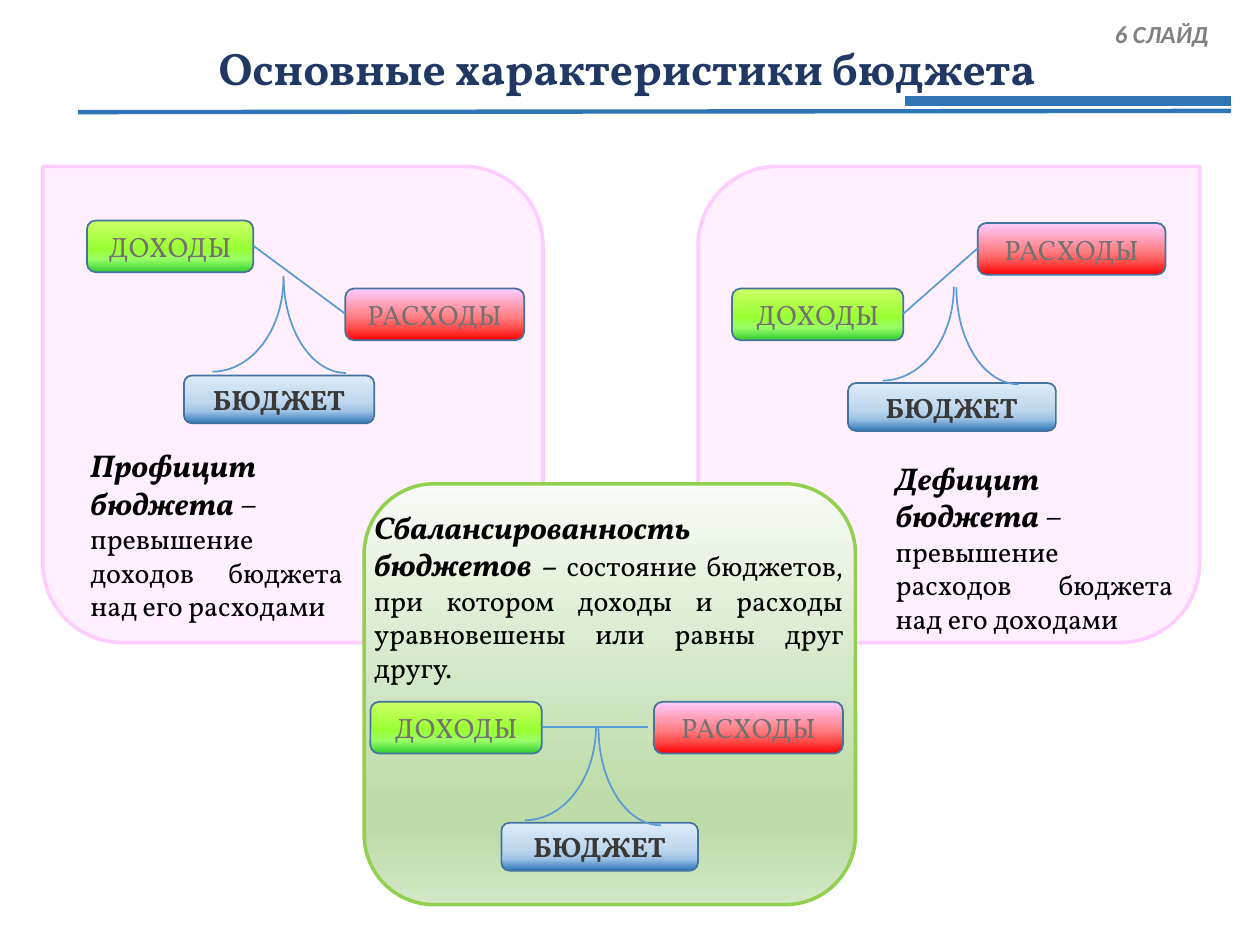
from lxml import etree
from pptx import Presentation
from pptx.dml.color import RGBColor
from pptx.enum.shapes import MSO_CONNECTOR, MSO_SHAPE
from pptx.enum.text import MSO_ANCHOR, MSO_AUTO_SIZE, PP_ALIGN
from pptx.oxml.ns import qn
from pptx.util import Inches, Pt

ROUNDED, ARC, DIAGONAL = MSO_SHAPE.ROUNDED_RECTANGLE, MSO_SHAPE.ARC, MSO_SHAPE.ROUND_2_DIAG_RECTANGLE
STRAIGHT = MSO_CONNECTOR.STRAIGHT
TOP, MIDDLE = MSO_ANCHOR.TOP, MSO_ANCHOR.MIDDLE
GROW = MSO_AUTO_SIZE.SHAPE_TO_FIT_TEXT
CENTER, JUSTIFY = PP_ALIGN.CENTER, PP_ALIGN.JUSTIFY

THEME = {
    "font": "Vollkorn", "number_font": "Calibri",
    "title_size": 26, "term_size": 18, "text_size": 16, "number_size": 14,
    "title": "203864", "text": "000000", "number": "808080",
    "label": "767171", "budget_label": "3B3838",
    "rule": "2E75B6", "scale": "5B9BD5", "box_line": "43739E",
    "pink": "FFEFFF", "pink_line": "FFCCFF", "green_line": "92D050",
    "balance": [(0, "F8FBF6"), (74, "BEDCAA"), (83, "BEDCAA"), (100, "D4E8C6")],
    "income": [(0, "CCFF66"), (56, "99FF33"), (75, "99FF66"), (100, "33CC33")],
    "expenses": [(0, "FFCCFF"), (56, "FF7C80"), (75, "FF5050"), (100, "FF0000")],
    "budget": [(0, "DEEBF7"), (56, "BDD7EE"), (75, "9DC3E6"), (100, "2E75B6")],
}


def add_box(kind, place, fill, line, width):
    """Add a preset shape; fill is a colour, a list of gradient stops or None."""
    shape = slide.shapes.add_shape(kind, *map(Inches, place))
    shape.shadow.inherit = False
    shape.line.color.rgb = RGBColor.from_string(line)
    shape.line.width = Pt(width)
    if fill is None:
        shape.fill.background()
    elif isinstance(fill, str):
        shape.fill.solid()
        shape.fill.fore_color.rgb = RGBColor.from_string(fill)
    else:
        shape.fill.gradient()
        shape.fill.gradient_angle = 270
        stops = shape.element.spPr.find(".//" + qn("a:gsLst"))
        for stop in list(stops):
            stops.remove(stop)
        for position, color in fill:
            stop = etree.SubElement(stops, qn("a:gs"), pos=str(position * 1000))
            etree.SubElement(stop, qn("a:srgbClr"), val=color)
    return shape


def style_run(run, size, color, bold=False, italic=False, font=THEME["font"]):
    run.font.name, run.font.size = font, Pt(size)
    run.font.bold, run.font.italic = bold, italic
    run.font.color.rgb = RGBColor.from_string(color)


presentation = Presentation()
presentation.slide_width, presentation.slide_height = Inches(10), Inches(7.5)
slide = presentation.slides.add_slide(presentation.slide_layouts[5])

# Title
title = slide.shapes.title
title.left, title.top, title.width, title.height = map(Inches, (0.67, 0.14, 8.62, 0.85))
title.text_frame.text = "Основные характеристики бюджета"
title.text_frame.vertical_anchor = MIDDLE
paragraph = title.text_frame.paragraphs[0]
paragraph.alignment, paragraph.line_spacing = CENTER, 0.9
style_run(paragraph.runs[0], THEME["title_size"], THEME["title"], bold=True)

# Panels: deficit, surplus, balance
add_box(DIAGONAL, (5.54, 1.32, 3.98, 3.78), THEME["pink"], THEME["pink_line"], 2)
surplus_panel = add_box(DIAGONAL, (0.34, 1.32, 3.97, 3.78), THEME["pink"], THEME["pink_line"], 2)
surplus_panel.element.spPr.get_or_add_xfrm().set("flipH", "1")
add_box(ROUNDED, (2.89, 3.84, 3.9, 3.34), THEME["balance"], THEME["green_line"], 2)

# Scales: labelled boxes as (left, top, width), stand arcs as (left, top)
LABELS = {
    "budget": ("БЮДЖЕТ", 0.38, THEME["budget_label"], True),
    "expenses": ("РАСХОДЫ", 0.41, THEME["label"], False),
    "income": ("ДОХОДЫ", 0.41, THEME["label"], False),
}
scales = [
    {"budget": (3.98, 6.53, 1.56), "expenses": (5.19, 5.57, 1.5), "income": (2.94, 5.57, 1.36),
     "left_arc": (3.42, 5.2), "right_arc": (4.75, 5.01)},
    {"budget": (1.46, 2.98, 1.51), "expenses": (2.74, 2.29, 1.42), "income": (0.69, 1.75, 1.32),
     "left_arc": (0.94, 1.64), "right_arc": (2.25, 1.42)},
    {"budget": (6.73, 3.04, 1.65), "expenses": (7.76, 1.77, 1.49), "income": (5.81, 2.29, 1.36),
     "left_arc": (6.26, 1.71), "right_arc": (7.59, 1.51)},
]
lines = []
for scale in scales:
    for name, (label, height, color, bold) in LABELS.items():
        box = add_box(ROUNDED, (*scale[name], height), THEME[name], THEME["box_line"], 1)
        box.text_frame.text = label
        box.text_frame.vertical_anchor = MIDDLE
        paragraph = box.text_frame.paragraphs[0]
        paragraph.alignment = CENTER
        style_run(paragraph.runs[0], THEME["text_size"], color, bold)
    for name, size, rotation in (("right_arc", (0.99, 1.54), 180), ("left_arc", (1.49, 1.13), 90)):
        arc = add_box(ARC, (*scale[name], *size), None, THEME["scale"], 1)
        arc.rotation = rotation
    # The beam joins the facing edges of the two boxes
    left, top, width = scale["income"]
    end_left, end_top, _ = scale["expenses"]
    gap = 0.05 if top == end_top else 0
    lines.append(((left + width, top + 0.2), (end_left - gap, end_top + 0.2), THEME["scale"], 1))

# Beams and the double rule under the title
lines += [
    ((0.62, 0.89), (9.77, 0.88), THEME["rule"], 2.5),
    ((7.18, 0.8), (9.77, 0.8), THEME["rule"], 6),
]
for start, end, color, width in lines:
    line = slide.shapes.add_connector(STRAIGHT, *map(Inches, (*start, *end)))
    line.line.color.rgb = RGBColor.from_string(color)
    line.line.width = Pt(width)
    etree.SubElement(line.element.spPr, qn("a:effectLst"))

# Definitions: paragraphs of (text, size, bold italic) runs
TERM, BODY = THEME["term_size"], THEME["text_size"]
definitions = [
    ((2.87, 3.98, 3.92, 1.51), [[
        ("Сбалансированность бюджетов ", TERM, True), ("– ", BODY, True),
        ("состояние бюджетов, при котором доходы и расходы уравновешены или равны друг другу.",
         BODY, False)]]),
    ((7.01, 3.59, 2.4, 1.51), [
        [("Дефицит бюджета ", TERM, True), ("–", TERM, False)],
        [("превышение расходов бюджета над его доходами", BODY, False)]]),
    ((0.62, 3.49, 2.2, 1.51), [
        [("Профицит бюджета ", TERM, True), ("–", TERM, False)],
        [("превышение доходов бюджета над его расходами", BODY, False)]]),
]
for place, paragraphs in definitions:
    text_frame = slide.shapes.add_textbox(*map(Inches, place)).text_frame
    text_frame.word_wrap, text_frame.auto_size = True, GROW
    text_frame.vertical_anchor = TOP
    for index, runs in enumerate(paragraphs):
        paragraph = text_frame.add_paragraph() if index else text_frame.paragraphs[0]
        paragraph.alignment = JUSTIFY
        for text, size, strong in runs:
            run = paragraph.add_run()
            run.text = text
            style_run(run, size, THEME["text"], strong, strong)

# Slide number
number = slide.shapes.add_textbox(*map(Inches, (8.75, 0.1, 0.94, 0.34)))
number.text_frame.text = "6 СЛАЙД"
number.text_frame.word_wrap, number.text_frame.auto_size = False, GROW
style_run(number.text_frame.paragraphs[0].runs[0], THEME["number_size"], THEME["number"],
          True, True, THEME["number_font"])

presentation.save("out.pptx")
